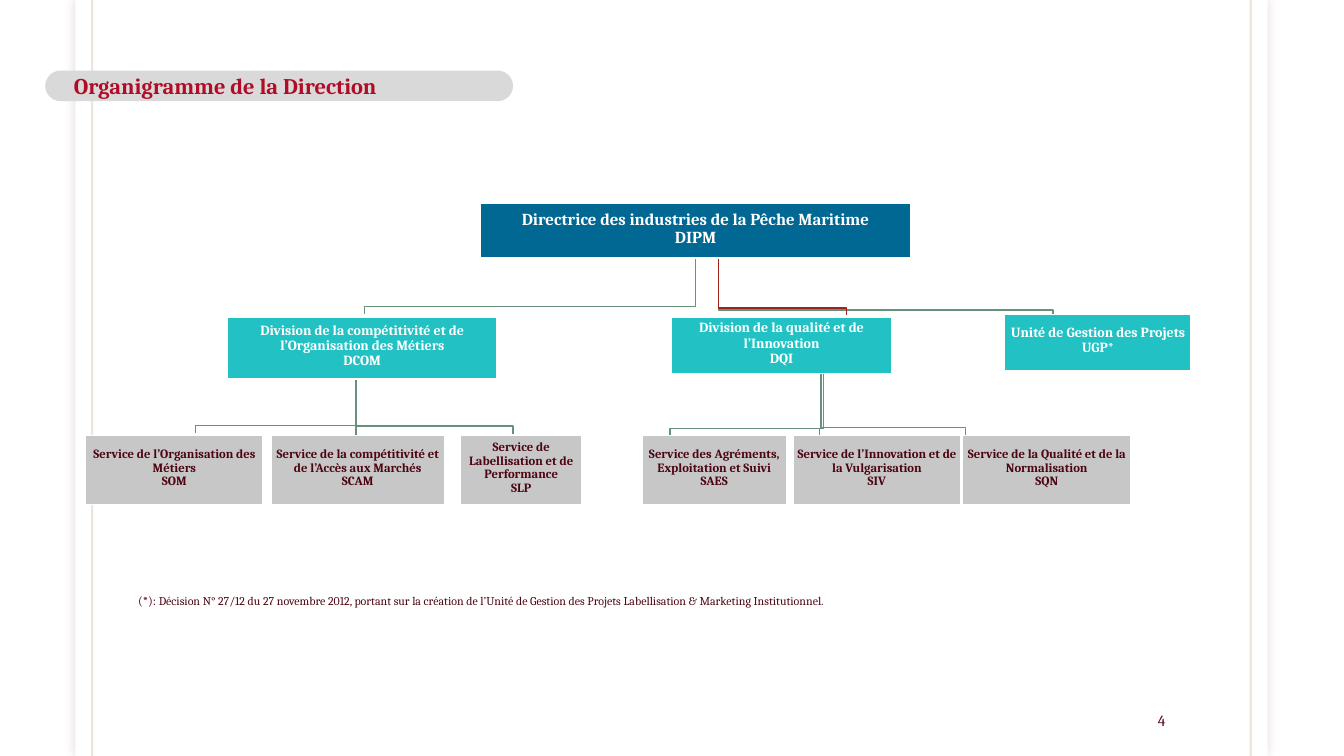
from dataclasses import dataclass

import pptx
import pptx.dml.color
import pptx.enum.shapes
import pptx.enum.text
import pptx.oxml
import pptx.util
from pptx.util import Cm

SHAPES = pptx.enum.shapes.MSO_SHAPE
ALIGN = pptx.enum.text.PP_ALIGN
ANCHOR = pptx.enum.text.MSO_ANCHOR
NAMESPACE = 'xmlns:a="http://schemas.openxmlformats.org/drawingml/2006/main"'


@dataclass(frozen=True)
class Theme:
    font: str = "Cambria"
    white: str = "FFFFFF"
    ink: str = "4D0511"
    title: str = "B10C27"
    title_band: str = "D9D9D9"
    direction: str = "006892"
    division: str = "22C2C4"
    service: str = "C7C7C7"
    link: str = "67917D"
    accent_link: str = "A22218"
    rail: str = "79540B"
    glow: str = "65150F"
    title_size: float = 16
    direction_size: float = 12
    page_size: float = 11
    division_size: float = 10
    service_size: float = 9
    mark_size: float = 8.9
    note_size: float = 8.5


THEME = Theme()
SLIDE_WIDTH, SLIDE_HEIGHT = 33.87, 19.05
DIVISION_TOP, SERVICE_TOP, SERVICE_HEIGHT = 8, 10.97, 1.75
DIVISION_DROP, SERVICE_DROP, LAST_DROP = 1.45, 2.27, 0.19

# left, width, lines
SERVICES = [
    (2.16, 4.47, ["Service de l’Organisation des Métiers", "SOM"]),
    (6.83, 4.37, ["Service de la compétitivité et de l’Accès aux Marchés", "SCAM"]),
    (11.61, 3.05, ["Service de Labellisation et de Performance", "SLP"]),
    (16.18, 3.64, ["Service des Agréments, Exploitation et Suivi", "SAES"]),
    (19.99, 4.22, ["Service de l’Innovation et de la Vulgarisation", "SIV"]),
    (24.26, 4.24, ["Service de la Qualité et de la Normalisation", "SQN"]),
]
# left, top, width, height, lines
DIVISIONS = [
    (5.74, DIVISION_TOP, 6.78, 1.55,
     ["Division de la compétitivité et de l’Organisation des Métiers", "DCOM"]),
    (16.92, DIVISION_TOP, 5.55, 1.42,
     ["Division de la qualité et de l’Innovation", "DQI"]),
    (25.32, 7.93, 4.7, 1.42, ["Unité de Gestion des Projets", "UGP*"]),
]
# start x, end x, end y, total drop, colour
LINKS = [
    (18.11, 26.54, 8, DIVISION_DROP, THEME.link),
    (20.68, 24.34, 10.97, SERVICE_DROP, THEME.link),
    (20.7, 20.65, 10.99, SERVICE_DROP, THEME.link),
    (20.75, 16.89, 10.99, SERVICE_DROP, THEME.link),
    (18.11, 21.34, 7.95, DIVISION_DROP, THEME.accent_link),
    (8.99, 12.93, 10.93, SERVICE_DROP, THEME.link),
    (8.97, 8.99, 11.4, SERVICE_DROP, THEME.link),
    (8.97, 4.93, 10.91, SERVICE_DROP, THEME.link),
    (17.53, 9.19, 7.91, DIVISION_DROP, THEME.link),
]


def rgb(colour):
    return pptx.dml.color.RGBColor.from_string(colour)


def style_font(font, size, colour, bold=False):
    font.name = THEME.font
    font.size = pptx.util.Pt(size)
    font.bold = bold
    font.color.rgb = rgb(colour)


def set_insets(frame, left, top, right, bottom):
    frame.margin_left, frame.margin_top = Cm(left), Cm(top)
    frame.margin_right, frame.margin_bottom = Cm(right), Cm(bottom)


def add_block(page, kind, left, top, width, height, fill):
    """Add a filled shape without outline or shadow."""
    block = page.shapes.add_shape(kind, Cm(left), Cm(top), Cm(width), Cm(height))
    block.shadow.inherit = False
    block.fill.solid()
    block.fill.fore_color.rgb = rgb(fill)
    block.line.fill.background()
    return block


def add_unit(page, left, top, width, height, lines, fill, colour, size):
    """Add one box of the organisation chart."""
    box = add_block(page, SHAPES.RECTANGLE, left, top, width, height, fill)
    box.line.color.rgb = rgb(THEME.white)
    box.line.width = pptx.util.Pt(1)
    frame = box.text_frame
    frame.word_wrap = True
    frame.vertical_anchor = ANCHOR.MIDDLE
    set_insets(frame, 0.03, 0.03, 0.03, 0.13)
    for index, line in enumerate(lines):
        para = frame.add_paragraph() if index else frame.paragraphs[0]
        para.text = line
        para.alignment = ALIGN.CENTER
        para.line_spacing = 0.9
        style_font(para.font, size, colour, bold=True)


def add_link(page, start, end, bottom, drop, colour):
    """Add a line that goes down, across, then down to a unit."""
    elbow = Cm(bottom - LAST_DROP)
    builder = page.shapes.build_freeform(Cm(start), Cm(bottom - drop))
    builder.add_line_segments(
        [(Cm(start), elbow), (Cm(end), elbow), (Cm(end), Cm(bottom))], close=False)
    link = builder.convert_to_shape()
    link.shadow.inherit = False
    link.fill.background()
    link.line.color.rgb = rgb(colour)
    link.line.width = pptx.util.Pt(1)


def add_rail(page, x):
    """Add a faint full-height line at the edge of the sheet."""
    rail = page.shapes.add_connector(
        pptx.enum.shapes.MSO_CONNECTOR.STRAIGHT, Cm(x), 0, Cm(x), Cm(SLIDE_HEIGHT))
    rail.line.color.rgb = rgb(THEME.rail)
    rail.line.width = pptx.util.Pt(1.5)
    colour = rail.line._ln.find(".//" + pptx.oxml.ns.qn("a:srgbClr"))
    colour.append(pptx.oxml.parse_xml(f'<a:alpha {NAMESPACE} val="15000"/>'))
    rail._element.spPr.append(pptx.oxml.parse_xml(f"<a:effectLst {NAMESPACE}/>"))


def add_sheet(page):
    """Add the white sheet with its soft glow and its two rails."""
    sheet = add_block(page, SHAPES.RECTANGLE, 1.9, 0, 30.05, SLIDE_HEIGHT, THEME.white)
    effects = sheet._element.spPr.find(pptx.oxml.ns.qn("a:effectLst"))
    effects.append(pptx.oxml.parse_xml(
        f'<a:outerShdw {NAMESPACE} blurRad="{pptx.util.Pt(7)}" dist="0" dir="0">'
        f'<a:srgbClr val="{THEME.glow}"><a:alpha val="15000"/></a:srgbClr>'
        '</a:outerShdw>'))
    for x in (2.32, 31.52):
        add_rail(page, x)


def add_title(page, text):
    band = add_block(page, SHAPES.ROUNDED_RECTANGLE, 1.14, 1.78, 11.79, 0.77,
                     THEME.title_band)
    band.adjustments[0] = 0.5
    frame = band.text_frame
    frame.word_wrap = True
    frame.vertical_anchor = ANCHOR.MIDDLE
    set_insets(frame, 0.61, 0.1, 0.2, 0.1)
    para = frame.paragraphs[0]
    para.text = text
    para.alignment = ALIGN.LEFT
    style_font(para.font, THEME.title_size, THEME.title, bold=True)


def add_text(page, left, top, width, height, spans, align, anchor):
    """Add a text box from (text, size) spans."""
    box = page.shapes.add_textbox(Cm(left), Cm(top), Cm(width), Cm(height))
    box.text_frame.word_wrap = True
    box.text_frame.vertical_anchor = anchor
    para = box.text_frame.paragraphs[0]
    para.alignment = align
    for text, size in spans:
        span = para.add_run()
        span.text = text
        style_font(span.font, size, THEME.ink)


def main():
    deck = pptx.Presentation()
    deck.slide_width, deck.slide_height = Cm(SLIDE_WIDTH), Cm(SLIDE_HEIGHT)
    page = deck.slides.add_slide(deck.slide_layouts[6])
    add_sheet(page)
    for link in LINKS:
        add_link(page, *link)
    add_unit(page, 12.1, 5.13, 10.86, 1.37,
             ["Directrice des industries de la Pêche Maritime", "DIPM"],
             THEME.direction, THEME.white, THEME.direction_size)
    for division in DIVISIONS:
        add_unit(page, *division, THEME.division, THEME.white, THEME.division_size)
    for left, width, lines in SERVICES:
        add_unit(page, left, SERVICE_TOP, width, SERVICE_HEIGHT, lines,
                 THEME.service, THEME.ink, THEME.service_size)
    add_title(page, "Organigramme de la Direction")
    add_text(page, 3.23, 14.81, 18.95, 1.27, [
        ("(*): ", THEME.mark_size),
        ("Décision N° 27/12 du 27 novembre 2012, portant sur la création de l’Unité "
         "de Gestion des Projets Labellisation & Marketing Institutionnel.",
         THEME.note_size),
    ], ALIGN.LEFT, ANCHOR.TOP)
    add_text(page, 27.08, 17.78, 2.54, 0.76, [("4", THEME.page_size)],
             ALIGN.RIGHT, ANCHOR.MIDDLE)
    deck.save("out.pptx")


if __name__ == "__main__":
    main()
